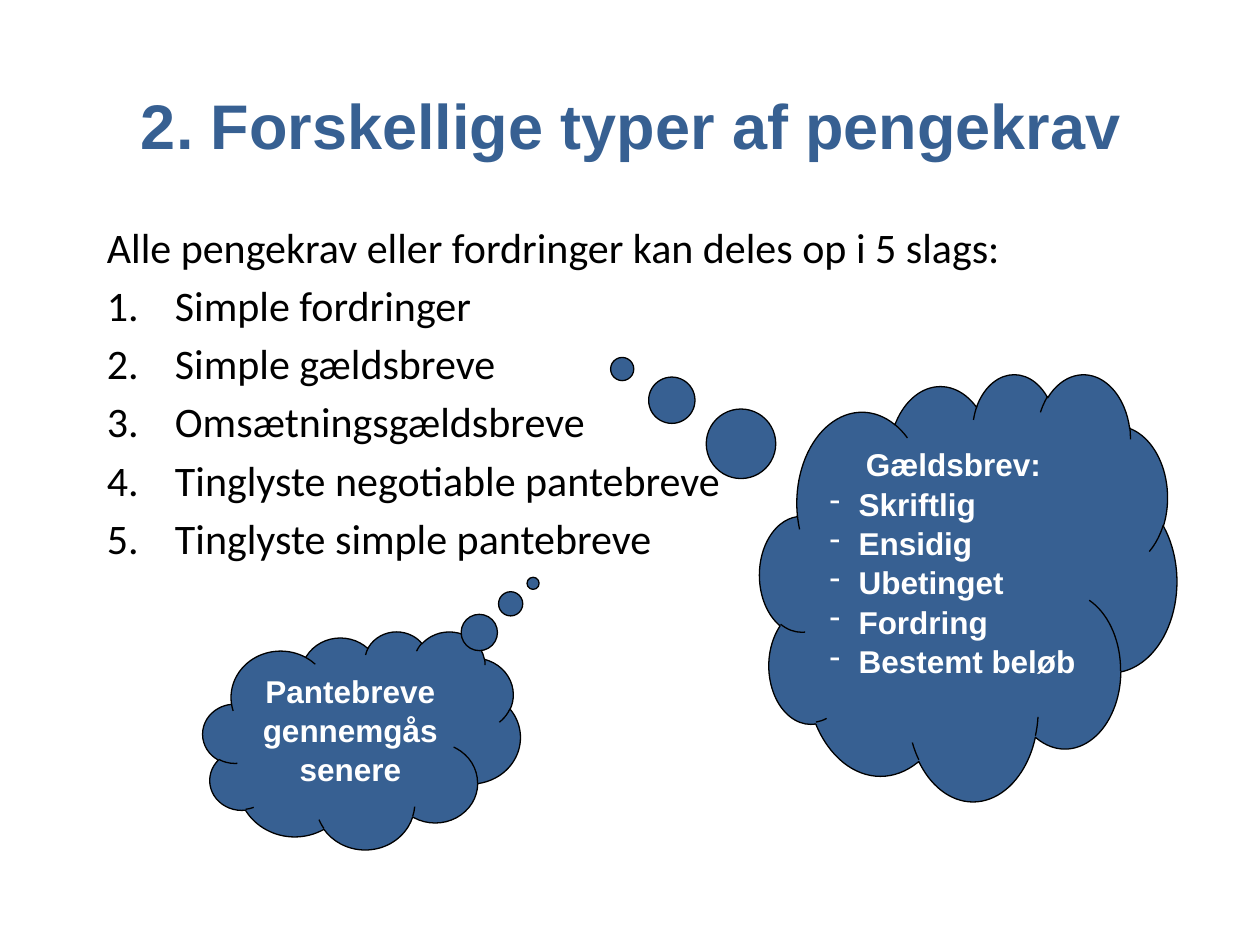
from lxml.etree import SubElement
from pptx import Presentation
from pptx.dml.color import RGBColor
from pptx.enum.shapes import MSO_SHAPE as Shape
from pptx.enum.text import MSO_ANCHOR as Anchor, PP_ALIGN as Align
from pptx.oxml.ns import qn
from pptx.util import Inches, Pt

COLORS = {"blue": "376092", "black": "000000", "white": "FFFFFF"}

presentation = Presentation()
presentation.slide_width = Inches(10)
presentation.slide_height = Inches(7.5)
slide = presentation.slides.add_slide(presentation.slide_layouts[6])


def share_box(left, top, width, height):
    across, down = presentation.slide_width / 100, presentation.slide_height / 100
    return [int(left * across), int(top * down), int(width * across), int(height * down)]


def write(paragraph, text, font, size, color, bold=False, bullet=None, indent=0):
    paragraph.text = text
    if bullet:
        properties = paragraph._p.get_or_add_pPr()
        properties.set("marL", str(Inches(indent)))
        properties.set("indent", str(-Inches(indent)))
        tag, attribute, value = bullet
        SubElement(properties, qn(tag)).set(attribute, value)
    paragraph.font.name = font
    paragraph.font.size = Pt(size)
    paragraph.font.bold = bold
    paragraph.font.color.rgb = RGBColor.from_string(COLORS[color])


title = slide.shapes.add_textbox(*share_box(5.1, 4.8, 90, 16.67)).text_frame
title.word_wrap = True
title.vertical_anchor = Anchor.MIDDLE
title.paragraphs[0].alignment = Align.CENTER
write(title.paragraphs[0], "2. Forskellige typer af pengekrav", "Arial", 36, "blue", bold=True)

body = slide.shapes.add_textbox(*share_box(7.5, 22.8, 87.5, 66)).text_frame
body.word_wrap = True
write(body.paragraphs[0], "Alle pengekrav eller fordringer kan deles op i 5 slags:", "Calibri", 24, "black")
claim_types = [
    "Simple fordringer",
    "Simple gældsbreve",
    "Omsætningsgældsbreve",
    "Tinglyste negotiable pantebreve",
    "Tinglyste simple pantebreve",
]
for claim_type in claim_types:
    paragraph = body.add_paragraph()
    paragraph.space_before = Pt(4.4)
    write(paragraph, claim_type, "Calibri", 24, "black",
          bullet=("a:buAutoNum", "type", "arabicPeriod"), indent=0.54)

debt_features = ["Skriftlig", "Ensidig", "Ubetinget", "Fordring", "Bestemt beløb"]
clouds = [
    (share_box(60.3, 39.5, 33.1, 45.2), (-0.83, -0.51), "Gældsbrev:", debt_features),
    (share_box(16.1, 66.8, 25.2, 23.07), (0.54, -0.72), "Pantebreve gennemgås senere", []),
]
for box, tail, heading, features in clouds:
    cloud = slide.shapes.add_shape(Shape.CLOUD_CALLOUT, *box)
    cloud.adjustments[0], cloud.adjustments[1] = tail
    cloud.shadow.inherit = False
    cloud.fill.solid()
    cloud.fill.fore_color.rgb = RGBColor.from_string(COLORS["blue"])
    cloud.line.color.rgb = RGBColor.from_string(COLORS["black"])
    cloud.line.width = Pt(0.75)
    frame = cloud.text_frame
    frame.word_wrap = True
    frame.vertical_anchor = Anchor.TOP
    frame.paragraphs[0].alignment = Align.CENTER
    write(frame.paragraphs[0], heading, "Arial", 18, "white", bold=True)
    for feature in features:
        paragraph = frame.add_paragraph()
        paragraph.alignment = Align.LEFT
        write(paragraph, feature, "Arial", 18, "white", bold=True,
              bullet=("a:buChar", "char", "-"), indent=0.23)
    for paragraph in frame.paragraphs:
        paragraph.line_spacing = 1.04

presentation.save("out.pptx")
